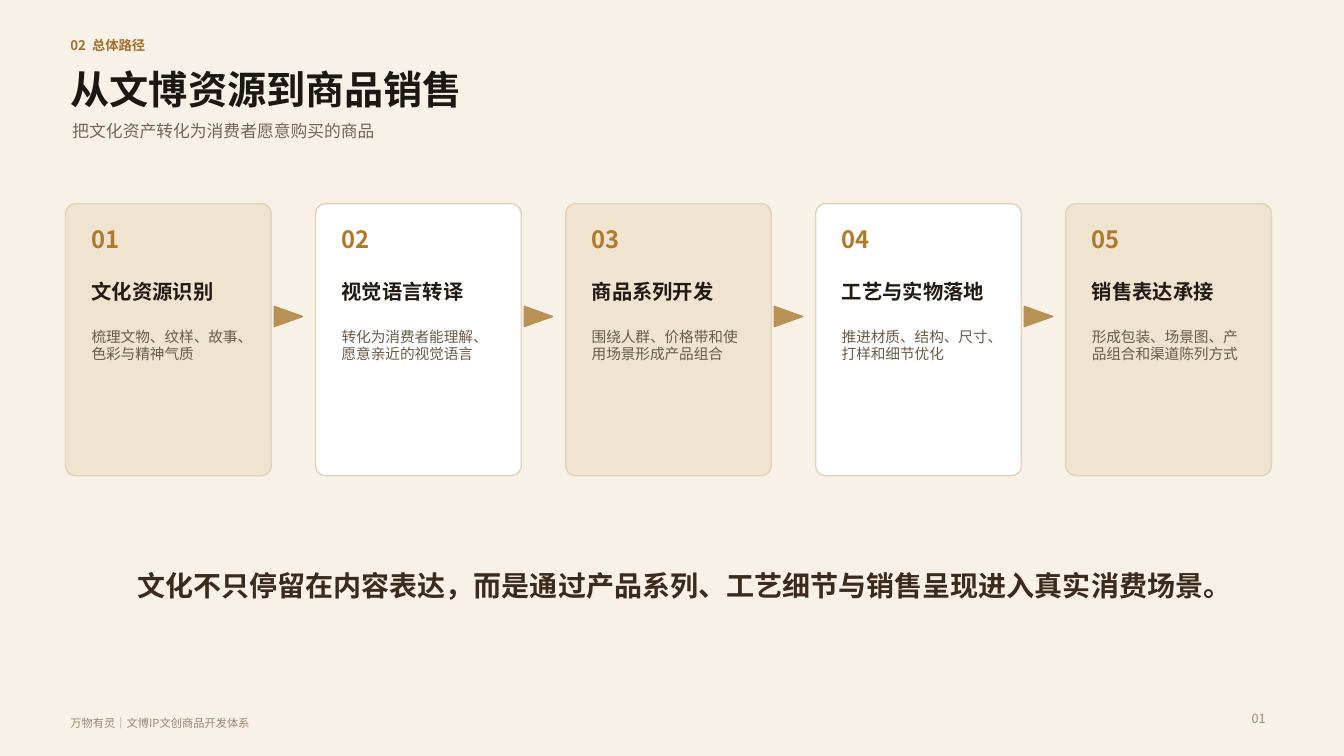
"""Build the slide on the path from museum resources to product sales."""
from dataclasses import dataclass

from pptx import Presentation
from pptx import util as u
from pptx.dml.color import RGBColor
from pptx.enum import shapes, text


@dataclass(frozen=True)
class Theme:
    font: str = "Noto Sans CJK SC"
    back: str = "F7F1E8"
    sand: str = "F0E3CF"
    white: str = "FFFFFF"
    edge: str = "E2D2BA"
    arrow: str = "B89255"
    label: tuple = (9.5, "A36F2C", True)
    title: tuple = (28, "1B1713", True)
    sub: tuple = (12, "756653", False)
    step: tuple = (17, "B07A2B", True)
    head: tuple = (14.5, "211A15", True)
    body: tuple = (10.5, "6B5B49", False)
    claim: tuple = (20, "3A2B1C", True)
    foot: tuple = (8, "9B8A70", False)
    page: tuple = (9, "9B8A70", False)


theme = Theme()
deck = Presentation()
deck.slide_width, deck.slide_height = u.Inches(13.33), u.Inches(7.5)
slide = deck.slides.add_slide(deck.slide_layouts[5])
slide.background.fill.solid()
slide.background.fill.fore_color.rgb = RGBColor.from_string(theme.back)


def write(place, words, style, align=text.PP_ALIGN.LEFT, anchor=text.MSO_ANCHOR.MIDDLE, box=None):
    """Put styled runs in a text box or a given placeholder and return the runs."""
    place = [u.Inches(n) for n in place]
    box = box or slide.shapes.add_textbox(*place)
    box.left, box.top, box.width, box.height = place
    frame = box.text_frame
    frame.word_wrap = True
    frame.auto_size = text.MSO_AUTO_SIZE.NONE
    frame.vertical_anchor = anchor
    para = frame.paragraphs[0]
    para.alignment = align
    size, color, bold = style
    for word in words:
        run = para.add_run()
        run.text = word
        run.font.name = theme.font
        run.font.size = u.Pt(size)
        run.font.bold = bold
        run.font.color.rgb = RGBColor.from_string(color)
    return para.runs


def draw(kind, place, fill, line):
    """Add a flat preset shape with a one-point outline."""
    shape = slide.shapes.add_shape(kind, *[u.Inches(n) for n in place])
    shape.shadow.inherit = False
    shape.fill.solid()
    shape.fill.fore_color.rgb = RGBColor.from_string(fill)
    shape.line.color.rgb = RGBColor.from_string(line)
    shape.line.width = u.Pt(1)
    return shape


label = write((0.6, 0.33, 3.2, 0.23), ["02", " ", "总体路径"], theme.label)
label[1]._r.get_or_add_rPr().set("spc", "210")
write((0.6, 0.63, 8.9, 0.5), ["从文博资源到商品销售"], theme.title, box=slide.shapes.title)
write((0.62, 1.14, 9.2, 0.32), ["把文化资产转化为消费者愿意购买的商品"], theme.sub)

steps = [
    ("文化资源识别", "梳理文物、纹样、故事、色彩与精神气质"),
    ("视觉语言转译", "转化为消费者能理解、愿意亲近的视觉语言"),
    ("商品系列开发", "围绕人群、价格带和使用场景形成产品组合"),
    ("工艺与实物落地", "推进材质、结构、尺寸、打样和细节优化"),
    ("销售表达承接", "形成包装、场景图、产品组合和渠道陈列方式"),
]
for i, (head, body) in enumerate(steps):
    left = 0.65 + 2.48 * i
    inner = left + 0.16
    fill = theme.white if i % 2 else theme.sand
    card = draw(shapes.MSO_SHAPE.ROUNDED_RECTANGLE, (left, 2.02, 2.04, 2.7), fill, theme.edge)
    card.adjustments[0] = 0.05
    write((inner, 2.22, 0.55, 0.3), [f"{i + 1:02}"], theme.step)
    write((inner, 2.72, 1.72, 0.34), [head], theme.head)
    write((inner, 3.2, 1.72, 0.85), [body], theme.body, anchor=text.MSO_ANCHOR.TOP)
    if i < len(steps) - 1:
        place = (left + 2.11, 3, 0.2, 0.28)
        arrow = draw(shapes.MSO_SHAPE.ISOSCELES_TRIANGLE, place, theme.arrow, theme.arrow)
        arrow.rotation = 90

write((1.2, 5.58, 10.9, 0.45), ["文化不只停留在内容表达，而是通过产品系列、工艺细节与销售呈现进入真实消费场景。"],
      theme.claim, text.PP_ALIGN.CENTER)
write((0.6, 7.08, 4.6, 0.18), ["万物有灵｜文博IP文创商品开发体系"], theme.foot)
write((12.1, 7.02, 0.55, 0.22), ["01"], theme.page, text.PP_ALIGN.RIGHT)

deck.save("out.pptx")
